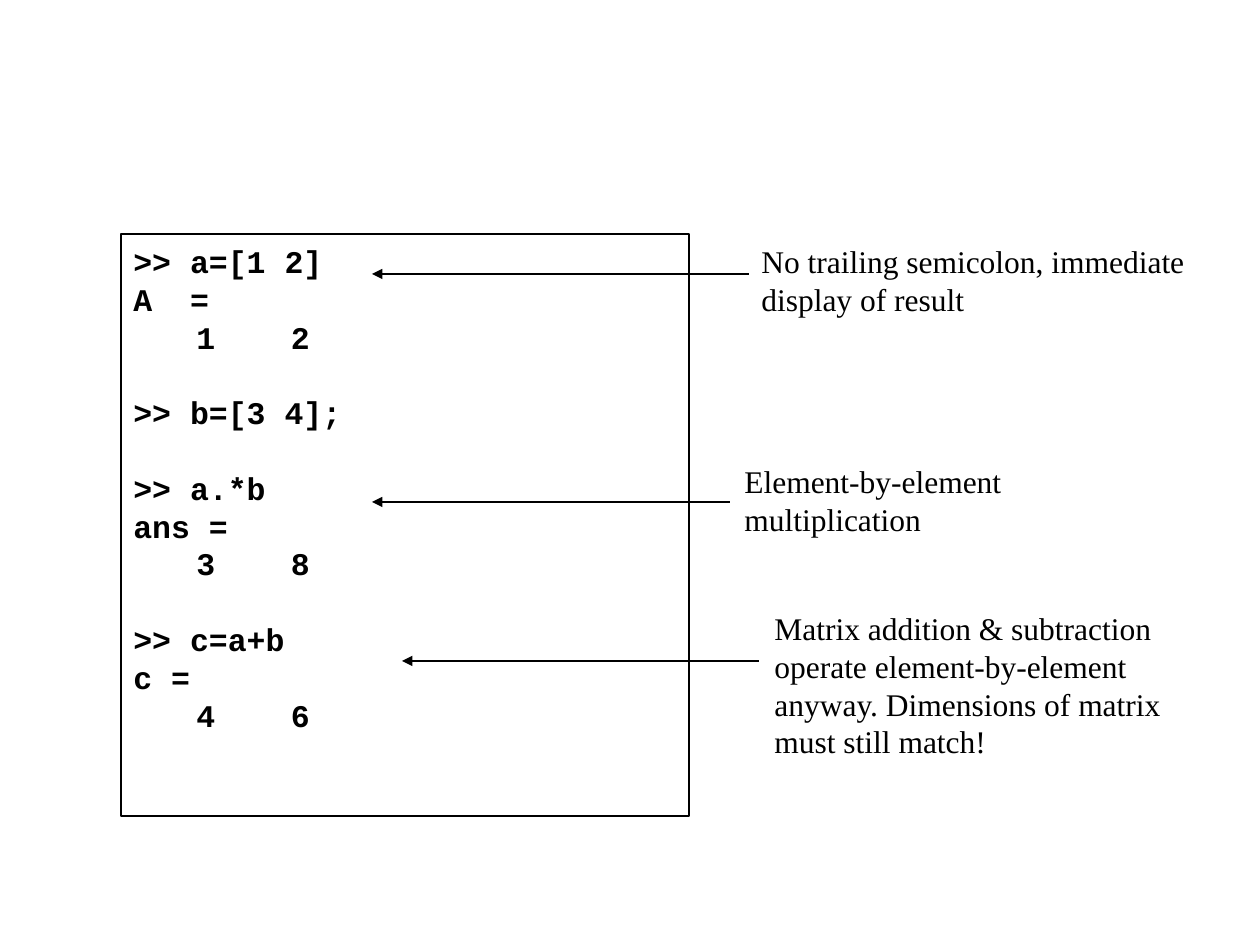
from pptx import Presentation
from pptx.dml.color import RGBColor as Rgb
from pptx.enum.shapes import MSO_CONNECTOR as Con, MSO_SHAPE as Geo
from pptx.enum.text import MSO_ANCHOR as Anchor, PP_ALIGN as Align
from pptx.oxml.ns import qn
from pptx.util import Pt
from lxml.etree import SubElement as Sub

HUES = {"ink": "000000", "paper": "FFFFFF"}
INK = Rgb.from_string(HUES["ink"])
PITCH = Pt(21.6)


def px(n):
    return round(n * 914400 / 126)


def write(shape, lines, face, bold):
    frame = shape.text_frame
    frame.word_wrap = True
    frame.vertical_anchor = Anchor.TOP
    frame.margin_top = px(8)
    for i, line in enumerate(lines):
        para = frame.paragraphs[0] if i == 0 else frame.add_paragraph()
        para.alignment = Align.LEFT
        para.line_spacing = PITCH
        if i and line.startswith(">>"):
            para.space_before = PITCH
        if line.startswith("\t"):
            tabs = Sub(para._p.get_or_add_pPr(), qn("a:tabLst"))
            Sub(tabs, qn("a:tab"), pos=str(px(63)), algn="l")
        run = para.add_run()
        run.text = line
        font = run.font
        font.name, font.size, font.bold = face, Pt(18), bold
        font.color.rgb = INK


deck = Presentation()
deck.slide_width, deck.slide_height = px(1260), px(945)
slide = deck.slides.add_slide(deck.slide_layouts[6])
shapes = slide.shapes

code = [
    ">> a=[1 2]", "A  =", "\t1    2",
    ">> b=[3 4];",
    ">> a.*b", "ans =", "\t3    8",
    ">> c=a+b", "c =", "\t4    6",
]
box = shapes.add_shape(Geo.RECTANGLE, px(121), px(234), px(568), px(582))
box.shadow.inherit = False
box.fill.solid()
box.fill.fore_color.rgb = Rgb.from_string(HUES["paper"])
box.line.color.rgb = INK
box.line.width = Pt(0.75)
write(box, code, "Courier New", True)

notes = [
    (749, 234, 476, 88, 749, 372, 274,
     "No trailing semicolon, immediate display of result"),
    (732, 454, 433, 88, 730, 372, 502,
     "Element-by-element multiplication"),
    (762, 601, 433, 164, 759, 402, 661,
     "Matrix addition & subtraction operate element-by-element anyway. "
     "Dimensions of matrix must still match!"),
]
for left, top, wide, high, start, end, y, text in notes:
    note = shapes.add_textbox(px(left), px(top), px(wide), px(high))
    write(note, [text], "Times New Roman", False)
    arrow = shapes.add_connector(Con.STRAIGHT, px(start), px(y), px(end), px(y))
    arrow.line.color.rgb = INK
    arrow.line.width = Pt(1.5)
    Sub(arrow.line._get_or_add_ln(), qn("a:tailEnd"), type="triangle")
    Sub(arrow._element.spPr, qn("a:effectLst"))

deck.save("out.pptx")
